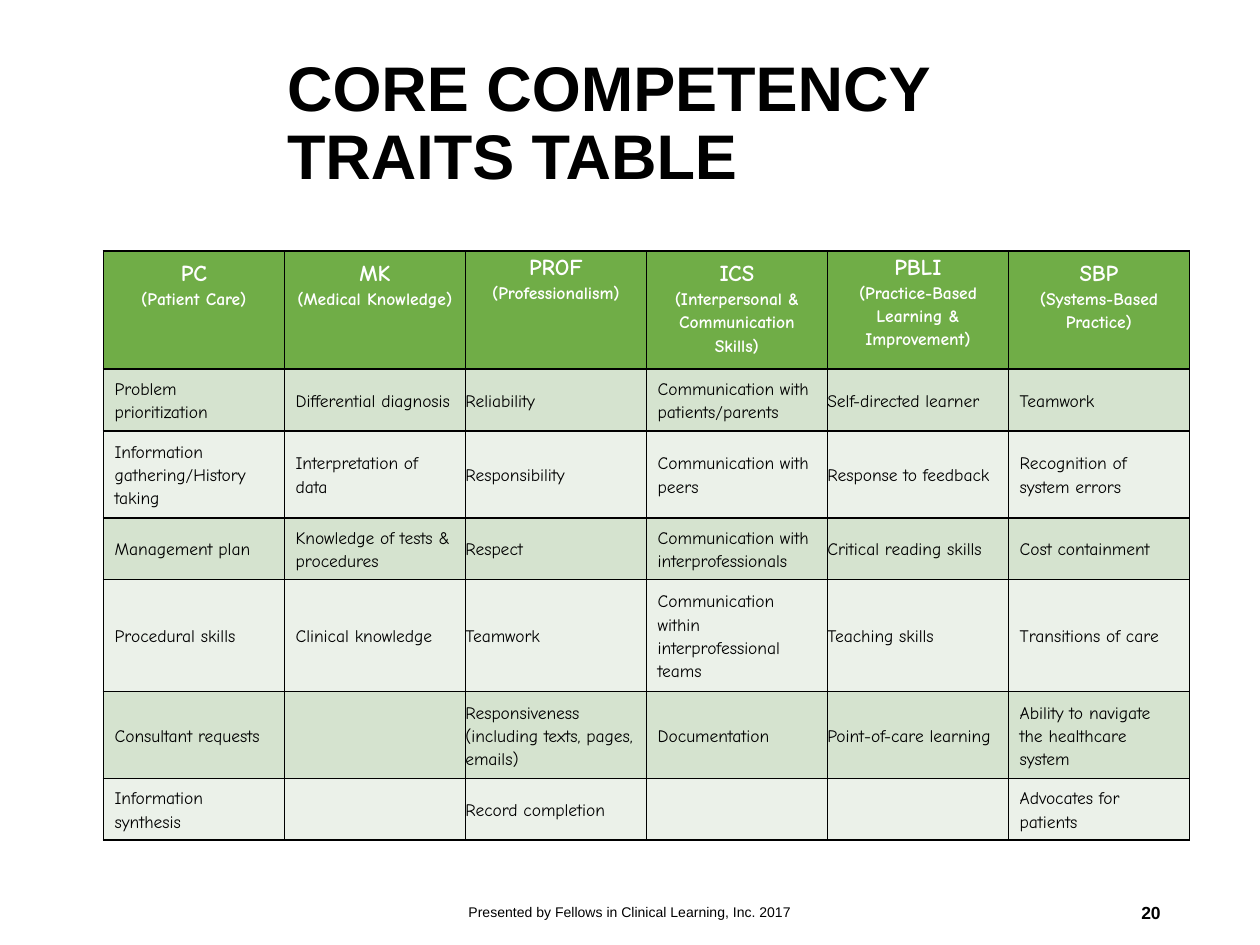
from lxml.etree import SubElement
from pptx import Presentation
from pptx.dml.color import RGBColor
from pptx.enum.text import MSO_ANCHOR, PP_ALIGN
from pptx.oxml.ns import qn
from pptx.util import Inches, Pt

COLORS = {
    "black": "000000",
    "white": "FFFFFF",
    "header": "70AD47",
    "odd_row": "D5E3CF",
    "even_row": "EBF1E9",
}

HEADERS = [
    ("PC", "(Patient Care)"),
    ("MK", "(Medical Knowledge)"),
    ("PROF", "(Professionalism)"),
    ("ICS", "(Interpersonal & Communication Skills)"),
    ("PBLI", "(Practice-Based Learning & Improvement)"),
    ("SBP", "(Systems-Based Practice)"),
]
TRAITS = [
    ["Problem prioritization", "Differential diagnosis", "Reliability",
     "Communication with patients/parents", "Self-directed learner", "Teamwork"],
    ["Information gathering/History taking", "Interpretation of data", "Responsibility",
     "Communication with peers", "Response to feedback", "Recognition of system errors"],
    ["Management plan", "Knowledge of tests & procedures", "Respect",
     "Communication with interprofessionals", "Critical reading skills", "Cost containment"],
    ["Procedural skills", "Clinical knowledge", "Teamwork",
     "Communication within interprofessional teams", "Teaching skills", "Transitions of care"],
    ["Consultant requests", "", "Responsiveness (including texts, pages, emails)",
     "Documentation", "Point-of-care learning", "Ability to navigate the healthcare system"],
    ["Information synthesis", "", "Record completion", "", "", "Advocates for patients"],
]
ROW_HEIGHTS = [0.94, 0.49, 0.69, 0.49, 0.89, 0.69, 0.49]
TABLE_WIDTH = 8.62
FLUSH_COLUMNS = (2, 4)  # PROF and PBLI have no cell margins

TITLE = {"name": "Arial", "size": Pt(36), "bold": True}
FOOTER = {"name": "Arial", "size": Pt(8), "bold": False}
PAGE_NUMBER = {"name": "Arial", "size": Pt(10), "bold": True}
HEADER_CODE = {"name": "Comic Neue", "size": Pt(13), "bold": True}
HEADER_NAME = {**HEADER_CODE, "size": Pt(10)}
TRAIT = {**HEADER_NAME, "bold": False}


def color(name):
    return RGBColor.from_string(COLORS[name])


def format_font(font, values, color_name):
    for attribute, value in values.items():
        setattr(font, attribute, value)
    font.color.rgb = color(color_name)


def add_text(page, text, place, values, align=PP_ALIGN.LEFT, spacing=1.0):
    box = page.shapes.add_textbox(*(Inches(length) for length in place))
    frame = box.text_frame
    frame.word_wrap = True
    frame.vertical_anchor = MSO_ANCHOR.MIDDLE
    para = frame.paragraphs[0]
    para.text = text
    para.alignment = align
    para.line_spacing = spacing
    for span in para.runs:
        format_font(span.font, values, "black")


def add_borders(cell):
    properties = cell._tc.get_or_add_tcPr()
    for side in ("lnL", "lnR", "lnT", "lnB"):
        line = SubElement(properties, qn(f"a:{side}"), w=str(Pt(1)))
        fill = SubElement(line, qn("a:solidFill"))
        SubElement(fill, qn("a:srgbClr"), val=COLORS["black"])


def style_cell(cell, column, fill_name):
    add_borders(cell)
    cell.fill.solid()
    cell.fill.fore_color.rgb = color(fill_name)
    flush = column in FLUSH_COLUMNS
    cell.margin_left = cell.margin_right = Inches(0 if flush else 0.09)
    cell.margin_top = cell.margin_bottom = Inches(0 if flush else 0.05)


def write_cell(cell, lines, color_name, align):
    cell.text = "\n".join(text for text, values in lines)
    for para, (text, values) in zip(cell.text_frame.paragraphs, lines):
        para.alignment = align
        para.line_spacing = 1.15
        format_font(para.font, values, color_name)
        for span in para.runs:
            format_font(span.font, values, color_name)


def add_traits_table(page):
    frame = page.shapes.add_table(
        len(ROW_HEIGHTS), len(HEADERS), Inches(0.82), Inches(1.99),
        Inches(TABLE_WIDTH), Inches(sum(ROW_HEIGHTS)))
    table = frame.table
    for column in table.columns:
        column.width = Inches(TABLE_WIDTH / len(HEADERS))
    for row, height in zip(table.rows, ROW_HEIGHTS):
        row.height = Inches(height)

    # Header row
    for column, (code, name) in enumerate(HEADERS):
        cell = table.cell(0, column)
        style_cell(cell, column, "header")
        write_cell(cell, [(code, HEADER_CODE), (name, HEADER_NAME)],
                   "white", PP_ALIGN.CENTER)

    # Trait rows in alternating tints
    for row, traits in enumerate(TRAITS, start=1):
        for column, trait in enumerate(traits):
            cell = table.cell(row, column)
            style_cell(cell, column, "odd_row" if row % 2 else "even_row")
            cell.vertical_anchor = MSO_ANCHOR.MIDDLE
            write_cell(cell, [(trait, TRAIT)], "black", PP_ALIGN.LEFT)


def main():
    deck = Presentation()
    deck.slide_width = Inches(10)
    deck.slide_height = Inches(7.5)
    page = deck.slides.add_slide(deck.slide_layouts[6])

    # Title
    add_text(page, "CORE COMPETENCY \vTRAITS TABLE", (2.18, 0.27, 7.14, 1.45),
             TITLE, spacing=0.9)

    add_traits_table(page)

    # Footer and page number
    add_text(page, "Presented by Fellows in Clinical Learning, Inc. 2017",
             (3.31, 7.04, 3.38, 0.4), FOOTER, PP_ALIGN.CENTER)
    add_text(page, "20", (7.06, 7.04, 2.25, 0.4), PAGE_NUMBER, PP_ALIGN.RIGHT)

    deck.save("out.pptx")


if __name__ == "__main__":
    main()
